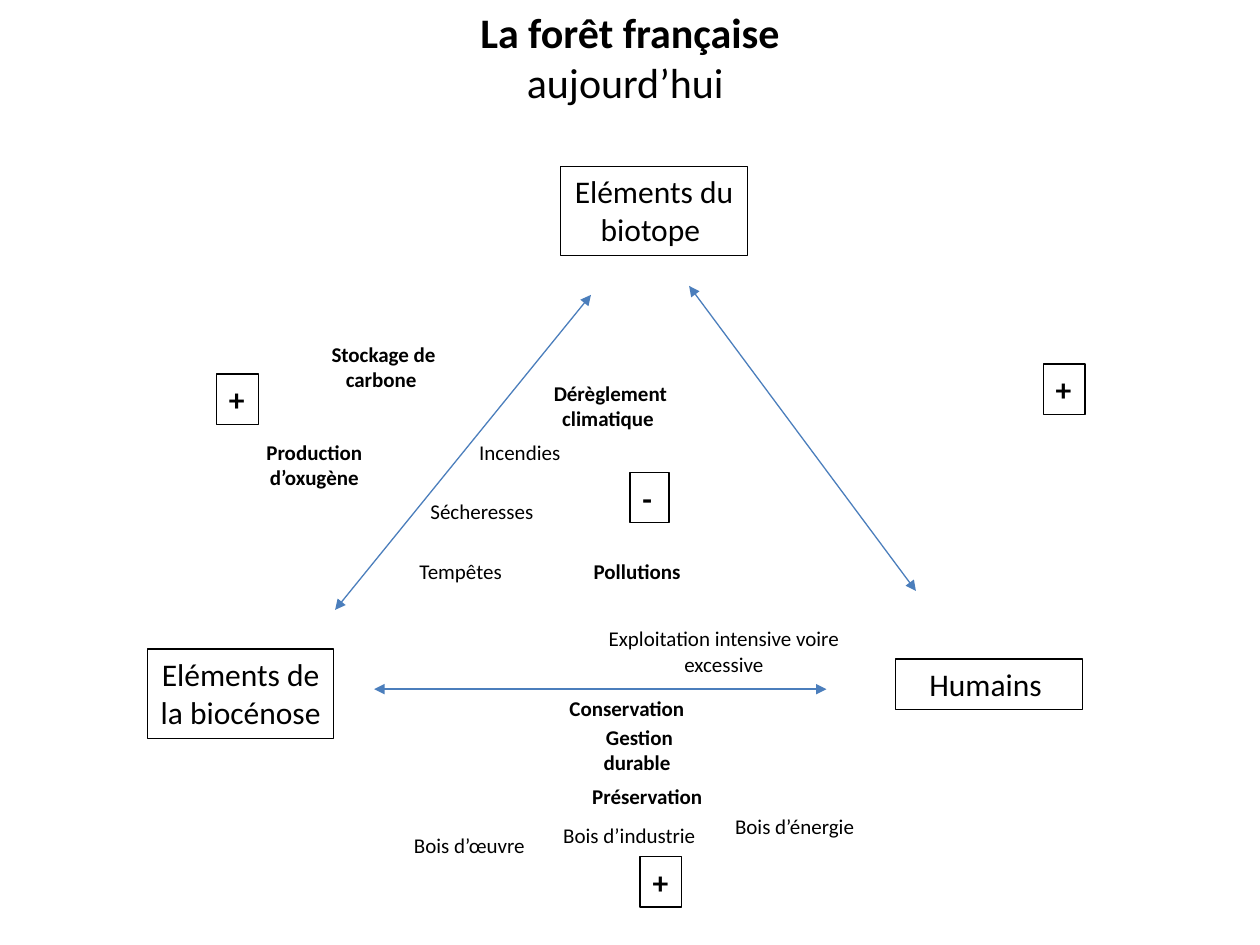
import pptx
import pptx.dml.color
import pptx.enum.shapes
import pptx.enum.text
import pptx.oxml
import pptx.util

Pt = pptx.util.Pt
ALIGN = pptx.enum.text.PP_ALIGN
ANCHOR = pptx.enum.text.MSO_ANCHOR
BLACK, BLUE = "000000", "4B7EBC"
LABEL_WIDTH, LINE_HEIGHT = 90, 14.4


def color(value):
    return pptx.dml.color.RGBColor.from_string(value)


def format_paragraph(paragraph, size, bold=False, alignment=ALIGN.CENTER):
    paragraph.alignment = alignment
    paragraph.font.name = "Calibri"
    paragraph.font.size = Pt(size)
    paragraph.font.bold = bold
    paragraph.font.color.rgb = color(BLACK)


def add_frame(slide, box, text, bold=False, alignment=ALIGN.CENTER, wrap=True):
    """Outlined rectangle with 18 pt text."""
    shape = slide.shapes.add_shape(
        pptx.enum.shapes.MSO_SHAPE.RECTANGLE, *map(Pt, box))
    shape.shadow.inherit = False
    shape.fill.background()
    shape.line.color.rgb = color(BLACK)
    shape.line.width = Pt(0.75)
    frame = shape.text_frame
    frame.word_wrap = wrap
    frame.vertical_anchor = ANCHOR.TOP
    frame.text = text
    format_paragraph(frame.paragraphs[0], 18, bold, alignment)


def add_label(slide, left, top, text, bold=False, lines=1, width=LABEL_WIDTH):
    height = 7.2 + lines * LINE_HEIGHT
    shape = slide.shapes.add_textbox(Pt(left), Pt(top), Pt(width), Pt(height))
    shape.text_frame.word_wrap = True
    shape.text_frame.text = text
    format_paragraph(shape.text_frame.paragraphs[0], 12, bold)


def add_double_arrow(slide, start, end):
    connector = slide.shapes.add_connector(
        pptx.enum.shapes.MSO_CONNECTOR.STRAIGHT, *map(Pt, start + end))
    connector.line.color.rgb = color(BLUE)
    connector.line.width = Pt(0.75)
    line = connector.line._get_or_add_ln()
    for tag in ("a:headEnd", "a:tailEnd"):
        line.append(pptx.oxml.xmlchemy.OxmlElement(tag))
        line[-1].set("type", "triangle")
    connector._element.spPr.append(
        pptx.oxml.xmlchemy.OxmlElement("a:effectLst"))


def place_title(slide, box):
    title = slide.shapes.title
    title.left, title.top, title.width, title.height = map(Pt, box)
    frame = title.text_frame
    frame.word_wrap = True
    frame.auto_size = pptx.enum.text.MSO_AUTO_SIZE.NONE
    frame.vertical_anchor = ANCHOR.TOP
    frame.text = "La forêt française\naujourd’hui "
    for paragraph, bold in zip(frame.paragraphs, (True, False)):
        format_paragraph(paragraph, 24, bold)
        paragraph.line_spacing = 1.0
        paragraph.space_before = Pt(0)


def place_triangle(slide, left, top):
    """The three poles of the forest and the arrows between them."""
    poles = [
        (0, 275.8, 51.1, "Eléments de la biocénose "),
        (236.2, 0, 51.1, "Eléments du biotope "),
        (427.7, 281.6, 28.8, "Humains "),
    ]
    for x, y, height, text in poles:
        add_frame(slide, (left + x, top + y, 106.6, height), text)
    arrows = [
        ((439.2, 242.7), (309.6, 68.4)),
        ((388.1, 298.8), (129.6, 298.8)),
        ((107.3, 253.5), (253.5, 73.5)),
    ]
    for start, end in arrows:
        add_double_arrow(slide, (left + start[0], top + start[1]),
                         (left + end[0], top + end[1]))


def place_side(slide, left, top, signs, labels=()):
    """Signs and labels that belong to one side of the triangle."""
    for x, y, sign in signs:
        width = 23.8 if sign == "+" else 22.3
        add_frame(slide, (left + x, top + y, width, 28.8), sign,
                  bold=True, alignment=ALIGN.LEFT, wrap=sign != "+")
    for x, y, *label in labels:
        add_label(slide, left + x, top + y, *label)


def main():
    presentation = pptx.Presentation()
    presentation.slide_width, presentation.slide_height = Pt(720), Pt(540)
    slide = presentation.slides.add_slide(presentation.slide_layouts[5])

    place_title(slide, (0, 0, 720, 65.5))
    place_triangle(slide, 84.2, 95)

    # Biotope and biocenosis
    place_side(slide, 120, 190, [(3.8, 23.8, "+"), (240, 80, "-")], [
        (54.2, 1.5, "Stockage de carbone ", True, 2),
        (14.6, 57.7, "Production d’oxugène", True, 2),
        (183.8, 23.8, "Dérèglement climatique ", True, 2),
        (133.4, 57.7, "Incendies "),
        (110.4, 91.5, "Sécheresses"),
        (99.6, 125.4, "Tempêtes "),
        (200.4, 125.4, "Pollutions ", True),
    ])
    # Biotope and humans
    place_side(slide, 590, 200, [(6.2, 8.1, "+")])
    # Biocenosis and humans
    place_side(slide, 220, 350, [(145.8, 139.6, "+")], [
        (117.7, 4.2, "Exploitation intensive voire excessive", False, 2, 151.9),
        (94.6, 43.8, "Conservation ", True),
        (100.4, 60.4, "Gestion durable ", True, 2),
        (106.2, 94.2, "Préservation ", True),
        (4.6, 122.3, "Bois d’œuvre "),
        (94.6, 116.6, "Bois d’industrie "),
        (190.4, 111.5, "Bois d’énergie "),
    ])
    presentation.save("out.pptx")


if __name__ == "__main__":
    main()
